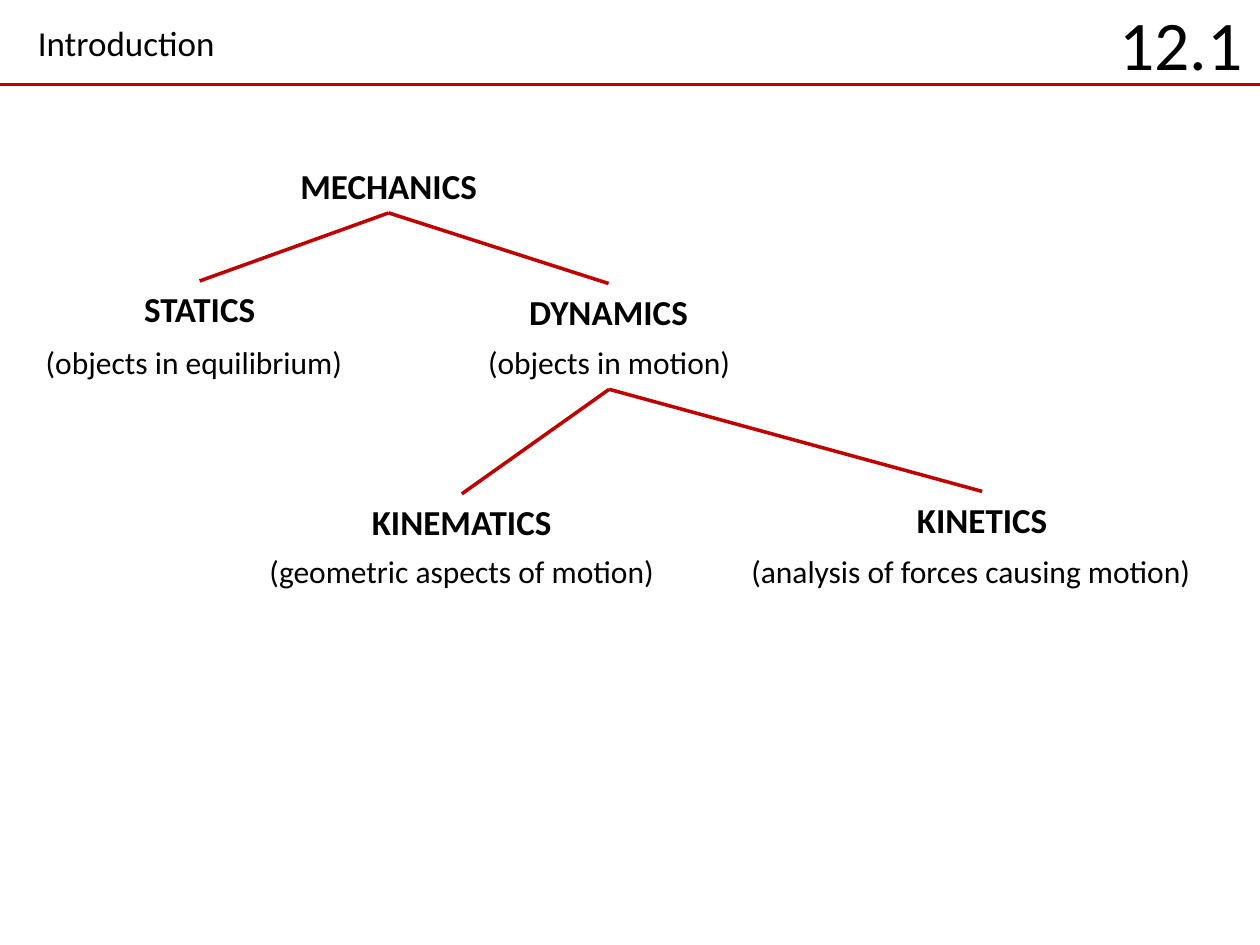
from lxml import etree
from pptx import Presentation
from pptx import util as u
from pptx.dml.color import RGBColor
from pptx.enum import shapes, text
from pptx.oxml.ns import qn

BLACK = RGBColor(0x00, 0x00, 0x00)
WHITE = RGBColor(0xFF, 0xFF, 0xFF)
RED = RGBColor(0xC0, 0x00, 0x00)
BOTTOM, TOP = 2, 0  # connection sites of a rectangle


def write(sp, words, size=20, bold=False, align=text.PP_ALIGN.CENTER,
          anchor=text.MSO_ANCHOR.MIDDLE, before=0, indent=0,
          fit=text.MSO_AUTO_SIZE.NONE):
    tf = sp.text_frame
    tf.word_wrap = True
    tf.auto_size = fit
    tf.vertical_anchor = anchor
    p = tf.paragraphs[0]
    p.alignment = align
    p.space_before = u.Pt(before)
    pPr = p._p.get_or_add_pPr()
    pPr.set("marL", str(u.Inches(indent)))
    pPr.set("indent", "0")
    etree.SubElement(pPr, qn("a:buNone"))
    r = p.add_run()
    r.text = words
    r.font.name = "Calibri"
    r.font.size = u.Pt(size)
    r.font.bold = bold
    r.font.color.rgb = BLACK


class Deck:
    """Holds the presentation, its style and the current slide."""

    heading_style = dict(bold=True, before=4,
                         fit=text.MSO_AUTO_SIZE.SHAPE_TO_FIT_TEXT)
    note_style = dict(size=18, anchor=text.MSO_ANCHOR.TOP)
    line_width = u.Pt(2)

    def __init__(self):
        self.prs = Presentation()
        self.prs.slide_width = u.Inches(10)
        self.prs.slide_height = u.Inches(7.5)
        self.s = self.prs.slides.add_slide(self.prs.slide_layouts[1])

    def fill_box(self, sp, words, box, **style):
        sp.left, sp.top, sp.width, sp.height = map(u.Inches, box)
        sp.fill.solid()
        sp.fill.fore_color.rgb = WHITE
        write(sp, words, **style)
        return sp

    def title(self, words, box):
        return self.fill_box(self.s.shapes.title, words, box, indent=0.2,
                             align=text.PP_ALIGN.LEFT)

    def body(self, words, box):
        return self.fill_box(self.s.placeholders[1], words, box,
                             **self.heading_style)

    def label(self, words, box, **style):
        sp = self.s.shapes.add_textbox(*map(u.Inches, box))
        return self.fill_box(sp, words, box, **style)

    def heading(self, words, box):
        return self.label(words, box, **self.heading_style)

    def note(self, words, box):
        return self.label(words, box, **self.note_style)

    def line(self, x1, y1, x2, y2):
        line = self.s.shapes.add_connector(
            shapes.MSO_CONNECTOR.STRAIGHT, *map(u.Inches, (x1, y1, x2, y2)))
        line.line.color.rgb = RED
        line.line.width = self.line_width
        etree.SubElement(line._element.spPr, qn("a:effectLst"))
        return line

    def branch(self, parent, child):
        line = self.line(0, 0, 1, 1)
        line.begin_connect(parent, BOTTOM)
        line.end_connect(child, TOP)


def main():
    deck = Deck()
    deck.title("Introduction", (0, 0, 8.75, 0.67))
    deck.label("12.1", (8.75, 0, 1.25, 0.67), size=39.8)
    deck.line(0, 0.67, 10, 0.67)

    mechanics = deck.body("MECHANICS", (2.25, 1.25, 1.67, 0.44))
    statics = deck.heading("STATICS", (1, 2.23, 1.17, 0.44))
    dynamics = deck.heading("DYNAMICS", (4.08, 2.25, 1.5, 0.44))
    kinematics = deck.heading("KINEMATICS", (2.83, 3.92, 1.67, 0.44))
    kinetics = deck.heading("KINETICS", (7.17, 3.9, 1.25, 0.44))

    deck.note("(objects in equilibrium)", (0.25, 2.67, 2.58, 0.42))
    motion = deck.note("(objects in motion)", (3.75, 2.67, 2.17, 0.42))
    deck.note("(geometric aspects of motion)", (2, 4.33, 3.33, 0.42))
    deck.note("(analysis of forces causing motion)", (5.83, 4.33, 3.75, 0.42))

    for parent, children in ((mechanics, (statics, dynamics)),
                             (motion, (kinematics, kinetics))):
        for child in children:
            deck.branch(parent, child)

    deck.prs.save("out.pptx")


if __name__ == "__main__":
    main()
